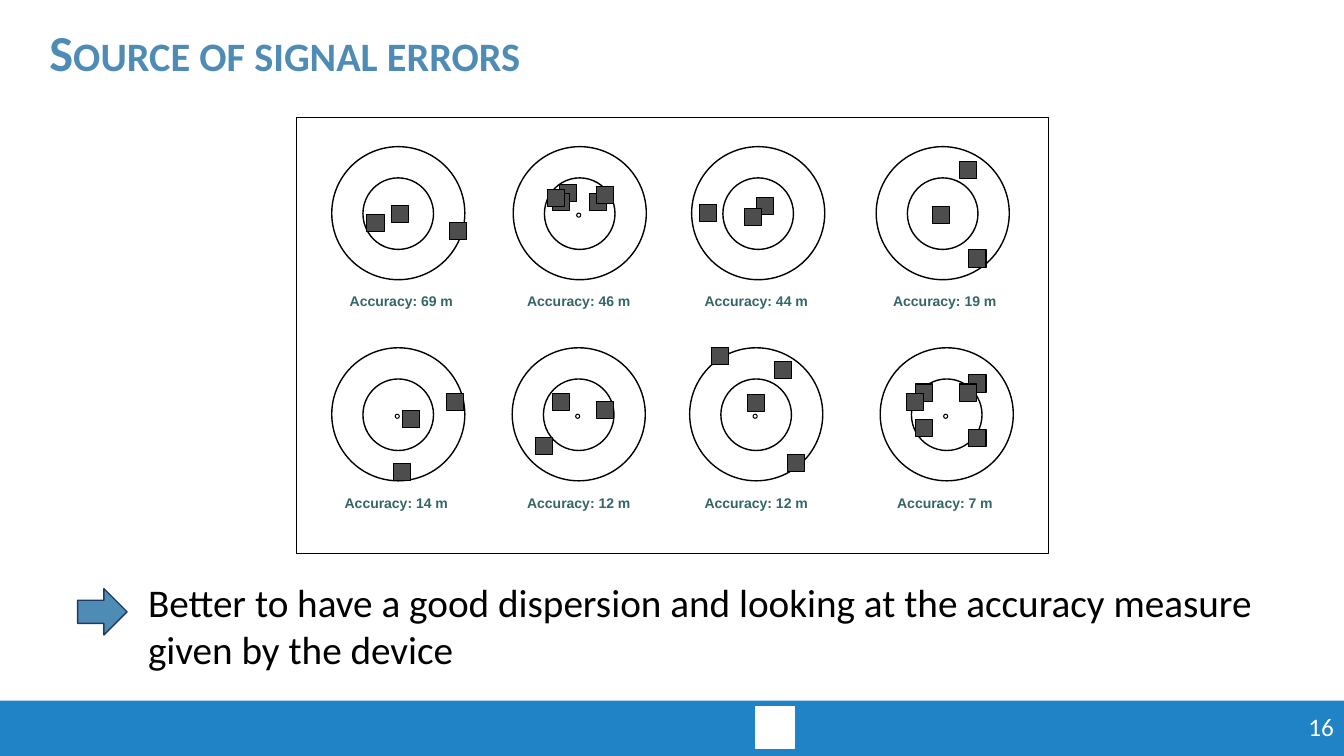
from pptx import Presentation
from pptx.dml.color import RGBColor
from pptx.enum.shapes import MSO_SHAPE
from pptx.enum.text import MSO_ANCHOR, MSO_AUTO_SIZE, PP_ALIGN
from pptx.util import Inches, Pt

WHITE = RGBColor(0xFF, 0xFF, 0xFF)
BLACK = RGBColor(0, 0, 0)
BAR_BLUE = RGBColor(0x1F, 0x83, 0xC5)
STEEL_BLUE = RGBColor(0x4F, 0x8C, 0xB5)
NAVY = RGBColor(0x20, 0x38, 0x64)
MARK_GRAY = RGBColor(0x4D, 0x4D, 0x4D)
LABEL_GREEN = RGBColor(0x34, 0x66, 0x67)

RING_SIZE = 1.32
MARK_SIZE = 0.17
TITLE_ONLY_LAYOUT = 5

# Ring left, label left, accuracy, whether the centre dot shows, mark corners
UPPER_TARGETS = [
    (3.29, 3.37, "69 m", False, [(3.88, 2.04), (3.64, 2.13), (4.46, 2.21)]),
    (5.09, 5.13, "46 m", True, [(5.55, 1.83), (5.48, 1.92), (5.43, 1.88),
                                (5.85, 1.92), (5.92, 1.85)]),
    (6.86, 6.89, "44 m", False, [(7.5, 1.96), (7.38, 2.07), (6.94, 2.03)]),
    (8.69, 8.76, "19 m", False, [(9.25, 2.05), (9.52, 1.6), (9.61, 2.48)]),
]
LOWER_TARGETS = [
    (3.29, 3.32, "14 m", True, [(3.99, 4.07), (4.43, 3.9), (3.9, 4.6)]),
    (5.08, 5.13, "12 m", True, [(5.48, 3.9), (5.31, 4.34), (5.92, 3.98)]),
    (6.84, 6.89, "12 m", True, [(7.41, 3.91), (7.06, 3.45), (7.68, 3.59),
                                (7.81, 4.51)]),
    (8.73, 8.8, "7 m", True, [(9.08, 4.16), (9.08, 3.81), (8.99, 3.9),
                              (9.61, 3.72), (9.52, 3.81), (9.61, 4.26)]),
]
# Ring top, label top, targets
TARGET_ROWS = [(1.455, 2.84, UPPER_TARGETS), (3.45, 4.85, LOWER_TARGETS)]


def write_text(shape, text, size, color, font="Calibri", bold=False,
               align=PP_ALIGN.LEFT, wrap=True):
    frame = shape.text_frame
    frame.word_wrap = wrap
    frame.auto_size = MSO_AUTO_SIZE.NONE
    frame.vertical_anchor = MSO_ANCHOR.MIDDLE
    paragraph = frame.paragraphs[0]
    paragraph.alignment = align
    run = paragraph.add_run()
    run.text = text
    run.font.name = font
    run.font.size = Pt(size)
    run.font.bold = bold
    run.font.color.rgb = color
    return paragraph


class SlideBuilder:
    def __init__(self, slide):
        self.slide = slide

    def add_title(self, text, left, top, width, height):
        title = self.slide.shapes.title
        title.left, title.top = Inches(left), Inches(top)
        title.width, title.height = Inches(width), Inches(height)
        paragraph = write_text(title, text, 36, STEEL_BLUE, bold=True)
        paragraph.line_spacing = 0.9
        properties = paragraph._p.get_or_add_pPr()
        properties.set("marL", str(Inches(0.39)))
        properties.set("indent", "0")
        paragraph.runs[0].font._element.set("cap", "small")

    def add_shape(self, kind, left, top, width, height,
                  fill=None, line=None, line_width=1):
        shape = self.slide.shapes.add_shape(
            kind, Inches(left), Inches(top), Inches(width), Inches(height))
        shape.shadow.inherit = False
        if fill is None:
            shape.fill.background()
        else:
            shape.fill.solid()
            shape.fill.fore_color.rgb = fill
        if line is None:
            shape.line.fill.background()
        else:
            shape.line.color.rgb = line
            shape.line.width = Pt(line_width)

    def add_text(self, text, left, top, width, height, size, color, **style):
        box = self.slide.shapes.add_textbox(
            Inches(left), Inches(top), Inches(width), Inches(height))
        write_text(box, text, size, color, **style)

    def add_target(self, left, top, has_dot, marks):
        self.add_shape(MSO_SHAPE.OVAL, left, top, RING_SIZE, RING_SIZE,
                       line=BLACK)
        self.add_shape(MSO_SHAPE.OVAL, left + 0.31, top + 0.31, 0.7, 0.71,
                       line=BLACK)
        if has_dot:
            self.add_shape(MSO_SHAPE.OVAL, left + 0.63, top + 0.66, 0.04, 0.04,
                           line=BLACK, line_width=0.75)
        for mark_left, mark_top in marks:
            self.add_shape(MSO_SHAPE.RECTANGLE, mark_left, mark_top,
                           MARK_SIZE, MARK_SIZE, MARK_GRAY, BLACK, 0.75)


def main():
    presentation = Presentation()
    presentation.slide_width = Inches(13.33)
    presentation.slide_height = Inches(7.5)
    layout = presentation.slide_layouts[TITLE_ONLY_LAYOUT]
    builder = SlideBuilder(presentation.slides.add_slide(layout))

    builder.add_title("Source of signal errors", 0, 0.17, 13.33, 0.76)
    builder.add_shape(MSO_SHAPE.RECTANGLE, 0, 6.95, 13.33, 0.55, BAR_BLUE)
    builder.add_shape(MSO_SHAPE.RECTANGLE, 7.49, 7.01, 0.39, 0.41, WHITE, WHITE)
    builder.add_text("16", 12.66, 7.01, 0.67, 0.4, 18, WHITE,
                     align=PP_ALIGN.RIGHT)

    builder.add_shape(MSO_SHAPE.RECTANGLE, 2.94, 1.16, 7.46, 4.33,
                      WHITE, BLACK, 0.5)
    for ring_top, label_top, targets in TARGET_ROWS:
        for ring_left, label_left, accuracy, has_dot, marks in targets:
            builder.add_target(ring_left, ring_top, has_dot, marks)
            builder.add_text(f"Accuracy: {accuracy}", label_left, label_top,
                             1.29 if len(accuracy) == 4 else 1.21, 0.28,
                             10, LABEL_GREEN, font="Arial", bold=True,
                             wrap=False)

    builder.add_shape(MSO_SHAPE.RIGHT_ARROW, 0.77, 5.84, 0.49, 0.46,
                      STEEL_BLUE, NAVY)
    builder.add_text("Better to have a good dispersion and looking at the "
                     "accuracy measure given by the device",
                     1.37, 5.68, 11.44, 1.04, 28, BLACK)
    presentation.save("out.pptx")


if __name__ == "__main__":
    main()
